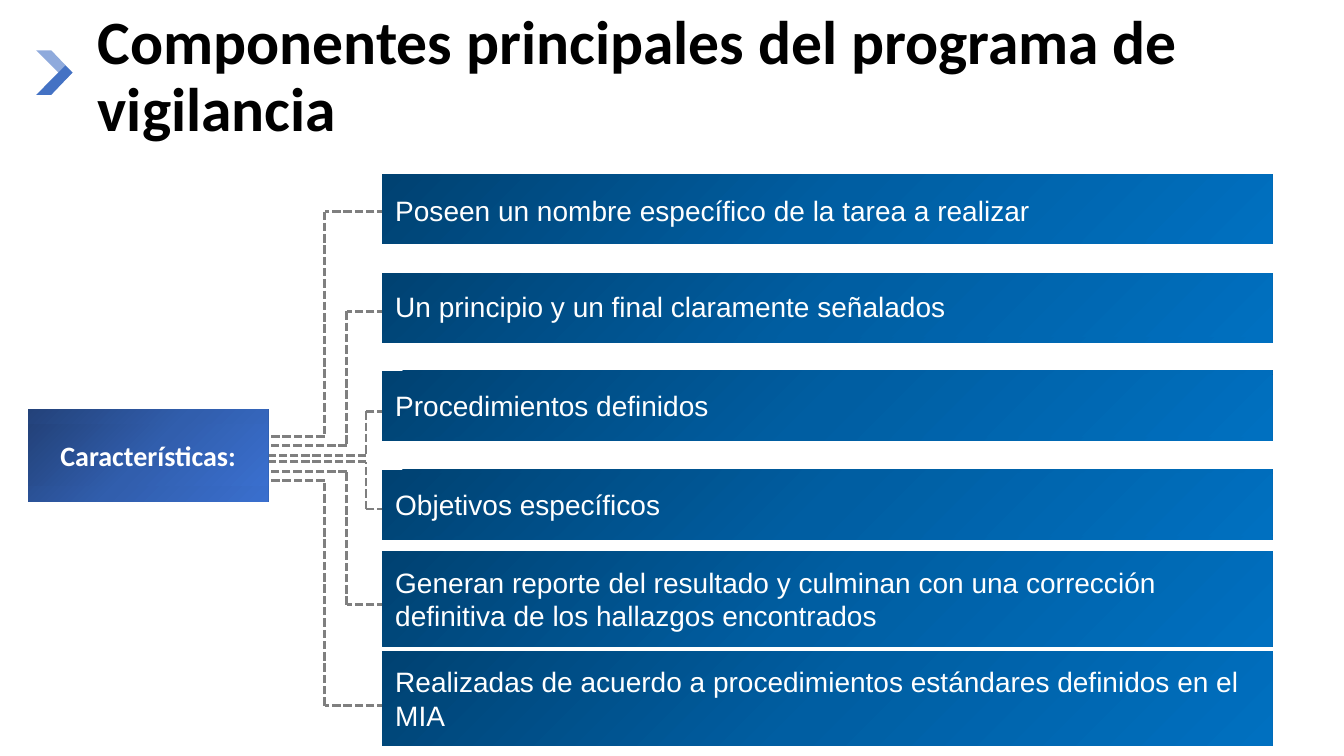
import copy

import pptx
import pptx.dml.color
import pptx.enum.dml
import pptx.enum.shapes
import pptx.enum.text
import pptx.oxml.ns
import pptx.util

PX = 9144  # 100 px to the inch
RGB = pptx.dml.color.RGBColor.from_string
ALIGN = pptx.enum.text.PP_ALIGN
RECT = pptx.enum.shapes.MSO_SHAPE.RECTANGLE
STRAIGHT = pptx.enum.shapes.MSO_CONNECTOR.STRAIGHT

THEME = {
    "blue": ("004272", "005EA2", "0070C0"),
    "indigo": ("23427A", "315EAD", "3A6FCE"),
    "chevron": ("8FAADC", "4472C4"),
    "line": "7F7F7F",
    "title": {"name": "Calibri", "size": pptx.util.Pt(44), "bold": True, "color": "000000"},
    "item": {"name": "Arial", "size": pptx.util.Pt(20), "bold": False, "color": "FFFFFF"},
    "hub": {"name": "Calibri", "size": pptx.util.Pt(20), "bold": True, "color": "FFFFFF"},
}


def write(tf, text, style, align):
    tf.word_wrap = True
    tf.vertical_anchor = pptx.enum.text.MSO_ANCHOR.MIDDLE
    p = tf.paragraphs[0]
    p.alignment = align
    r = p.add_run()
    r.text = text
    for key, value in THEME[style].items():
        if key == "color":
            r.font.color.rgb = RGB(value)
        else:
            setattr(r.font, key, value)
    return p


def gradient_box(x, y, w, h, colors):
    s = slide.shapes.add_shape(RECT, x * PX, y * PX, w * PX, h * PX)
    s.shadow.inherit = False
    s.line.fill.background()
    s.fill.gradient()
    s.fill.gradient_angle = 315  # counter-clockwise: dark top left, light bottom right
    first = s._element.spPr.find(".//" + pptx.oxml.ns.qn("a:gs"))
    first.addnext(copy.deepcopy(first))
    for stop, position, color in zip(s.fill.gradient_stops, (0, 0.5, 1), THEME[colors]):
        stop.position = position
        stop.color.rgb = RGB(color)
    return s


prs = pptx.Presentation()
prs.slide_width, prs.slide_height = 1333 * PX, 750 * PX
slide = prs.slides.add_slide(prs.slide_layouts[5])

# Title
title = slide.shapes.title
title.left, title.top, title.width, title.height = 87 * PX, 5 * PX, 1150 * PX, 145 * PX
title.text_frame.auto_size = pptx.enum.text.MSO_AUTO_SIZE.NONE
p = write(title.text_frame, "Componentes principales del programa de vigilancia", "title", ALIGN.LEFT)
p.line_spacing = 0.9

# Chevron: two mirrored arms
arms = (
    [(36, 50), (65, 79), (72, 72), (51, 50)],
    [(36, 94), (65, 65), (72, 72), (51, 94)],
)
for points, color in zip(arms, THEME["chevron"]):
    builder = slide.shapes.build_freeform(*points[0], scale=PX)
    builder.add_line_segments(points[1:], close=True)
    s = builder.convert_to_shape()
    s.shadow.inherit = False
    s.fill.solid()
    s.fill.fore_color.rgb = RGB(color)
    s.line.fill.background()

# Dashed branches: (item y, bend x, hub y)
branches = (
    (210, 322, 433),
    (309, 344, 442),
    (408, 363, 452),
    (505, 363, 458),
    (600, 344, 468),
    (700, 322, 477),
)
for item_y, bend_x, hub_y in branches:
    route = ((662, item_y), (bend_x, item_y), (bend_x, hub_y), (248, hub_y))
    for (x1, y1), (x2, y2) in zip(route, route[1:]):
        c = slide.shapes.add_connector(STRAIGHT, x1 * PX, y1 * PX, x2 * PX, y2 * PX)
        c.line.color.rgb = RGB(THEME["line"])
        c.line.width = pptx.util.Pt(2)
        c.line.dash_style = pptx.enum.dml.MSO_LINE.SQUARE_DOT
        c._element.spPr.append(pptx.oxml.parse_xml(
            "<a:effectLst %s/>" % pptx.oxml.ns.nsdecls("a")))

# Boxes: a plate behind, then a text box over it
ITEM_X, ITEM_W, PLATE_H = 379, 883, 69
FIRST_Y, LAST_Y = 173, 661
items = (
    ("Poseen un nombre específico de la tarea a realizar", 178, 61),
    ("Un principio y un final claramente señalados", 273, 61),
    ("Procedimientos definidos", 372, 61),
    ("Objetivos específicos", 470, 61),
    ("Generan reporte del resultado y culminan con una corrección"
     " definitiva de los hallazgos encontrados", 547, 94),
    ("Realizadas de acuerdo a procedimientos estándares definidos en el MIA", 646, 94),
)
boxes = []
for i, (text, y, h) in enumerate(items):
    plate_y = round(FIRST_Y + i * (LAST_Y - FIRST_Y) / (len(items) - 1))
    boxes.append((text, ITEM_X, ITEM_W, plate_y, PLATE_H, y, h, "blue", "item", ALIGN.LEFT))
boxes.append(("Características:", 28, 238, 406, 92, 421, 61, "indigo", "hub", ALIGN.CENTER))

for text, x, w, plate_y, plate_h, y, h, colors, style, align in boxes:
    gradient_box(x, plate_y, w, plate_h, colors)
    tf = gradient_box(x, y, w, h, colors).text_frame
    for side in ("left", "top", "right", "bottom"):
        setattr(tf, "margin_" + side, 13 * PX)
    tf.auto_size = pptx.enum.text.MSO_AUTO_SIZE.SHAPE_TO_FIT_TEXT
    write(tf, text, style, align)

prs.save("out.pptx")
